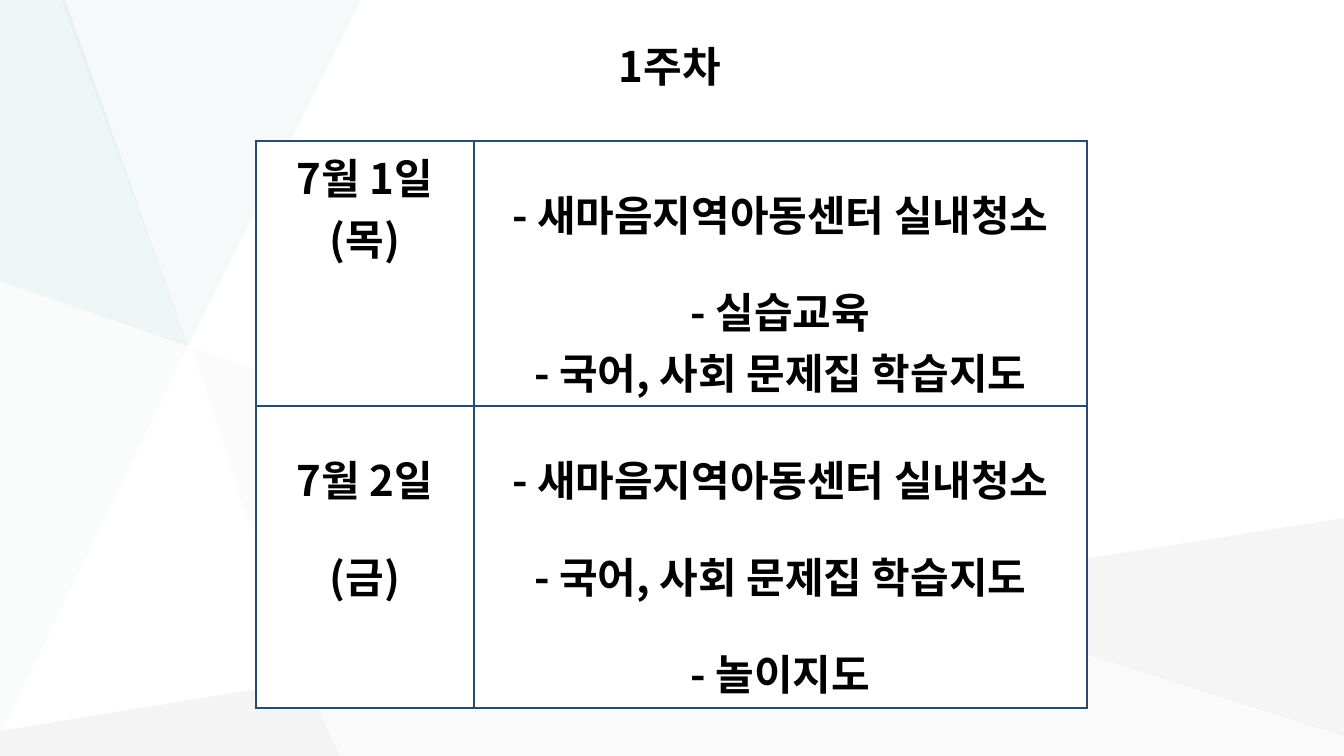
from pptx import Presentation
from pptx.dml.color import RGBColor
from pptx.enum.text import MSO_ANCHOR, PP_ALIGN
from pptx.oxml import parse_xml
from pptx.oxml.ns import nsdecls, qn
from pptx.util import Emu, Pt

PX = 12192000 / 1344
FONT = "Noto Sans CJK KR"
TEXT_FORMAT = {"name": FONT, "size": Pt(30), "bold": True}


def rgb(color):
    return RGBColor.from_string(color)


def write(tf, lines):
    """Fill a text frame with centred bold lines of (text, line spacing)."""
    for i, (text, spacing) in enumerate(lines):
        p = tf.paragraphs[0] if i == 0 else tf.add_paragraph()
        p.alignment = PP_ALIGN.CENTER
        p.line_spacing = spacing
        r = p.add_run()
        r.text = text
        for key, value in TEXT_FORMAT.items():
            setattr(r.font, key, value)
        r.font.color.rgb = rgb("000000")
        r.font._element.append(
            parse_xml(f'<a:ea {nsdecls("a")} typeface="{FONT}"/>'))


prs = Presentation()
prs.slide_width, prs.slide_height = Emu(12192000), Emu(6858000)
s = prs.slides.add_slide(prs.slide_layouts[6])

# Background facets: colour, opacity in percent, corners in px
facets = [
    ("F3F2F2", 26, [(192, 347), (243, 506), (306, 681), (886, 590)]),
    ("B6B8BA", 15, [(306, 681), (0, 731), (0, 756), (340, 756)]),
    ("E0EDED", 31, [(361, 0), (62, 0), (188, 346)]),
    ("C6C8CA", 17, [(1344, 518), (886, 590), (1344, 736)]),
    ("B6B8BA", 6, [(886, 590), (307, 681), (340, 756), (1344, 756), (1344, 735)]),
    ("C1DBDB", 27, [(65, 0), (0, 0), (0, 281), (188, 346)]),
    ("C1DBDB", 8, [(0, 281), (0, 736), (188, 346)]),
]
for color, opacity, corners in facets:
    builder = s.shapes.build_freeform(*corners[0], scale=PX)
    builder.add_line_segments(corners[1:], close=True)
    sp = builder.convert_to_shape()
    sp.shadow.inherit = False
    sp.line.fill.background()
    sp.fill.solid()
    sp.fill.fore_color.rgb = rgb(color)
    clr = sp._element.spPr.find(qn("a:solidFill"))[0]
    clr.append(parse_xml(f'<a:alpha {nsdecls("a")} val="{opacity * 1000}"/>'))

# Title
title = s.shapes.add_textbox(*(Emu(round(v * PX)) for v in (47, 14, 1246, 104)))
tf = title.text_frame
tf.word_wrap = True
tf.vertical_anchor = MSO_ANCHOR.MIDDLE
write(tf, [("1주차", 1.0)])

# Schedule table
cleaning = ("- 새마음지역아동센터 실내청소", 1.6)
study = "- 국어, 사회 문제집 학습지도"
schedule = [
    [[("7월 1일", 1.0), ("(목)", 1.0)],
     [cleaning, ("- 실습교육", 1.6), (study, 1.0)]],
    [[("7월 2일", 1.6), ("(금)", 1.6)],
     [cleaning, (study, 1.6), ("- 놀이지도", 1.6)]],
]
col_widths, row_heights = (218, 613), (265, 302)
frame = s.shapes.add_table(2, 2, *(Emu(round(v * PX)) for v in (
    256, 141, sum(col_widths), sum(row_heights))))
table = frame.table
table.first_row = table.horz_banding = False
for col, width in zip(table.columns, col_widths):
    col.width = Emu(round(width * PX))
for row, height, entries in zip(table.rows, row_heights, schedule):
    row.height = Emu(round(height * PX))
    for cell, lines in zip(row.cells, entries):
        write(cell.text_frame, lines)
        tcPr = cell._tc.get_or_add_tcPr()
        for side in ("lnL", "lnR", "lnT", "lnB"):
            tcPr.append(parse_xml(
                f'<a:{side} {nsdecls("a")} w="12700"><a:solidFill>'
                f'<a:srgbClr val="264C72"/></a:solidFill></a:{side}>'))
        cell.fill.solid()
        cell.fill.fore_color.rgb = rgb("FFFFFF")

prs.save("out.pptx")
